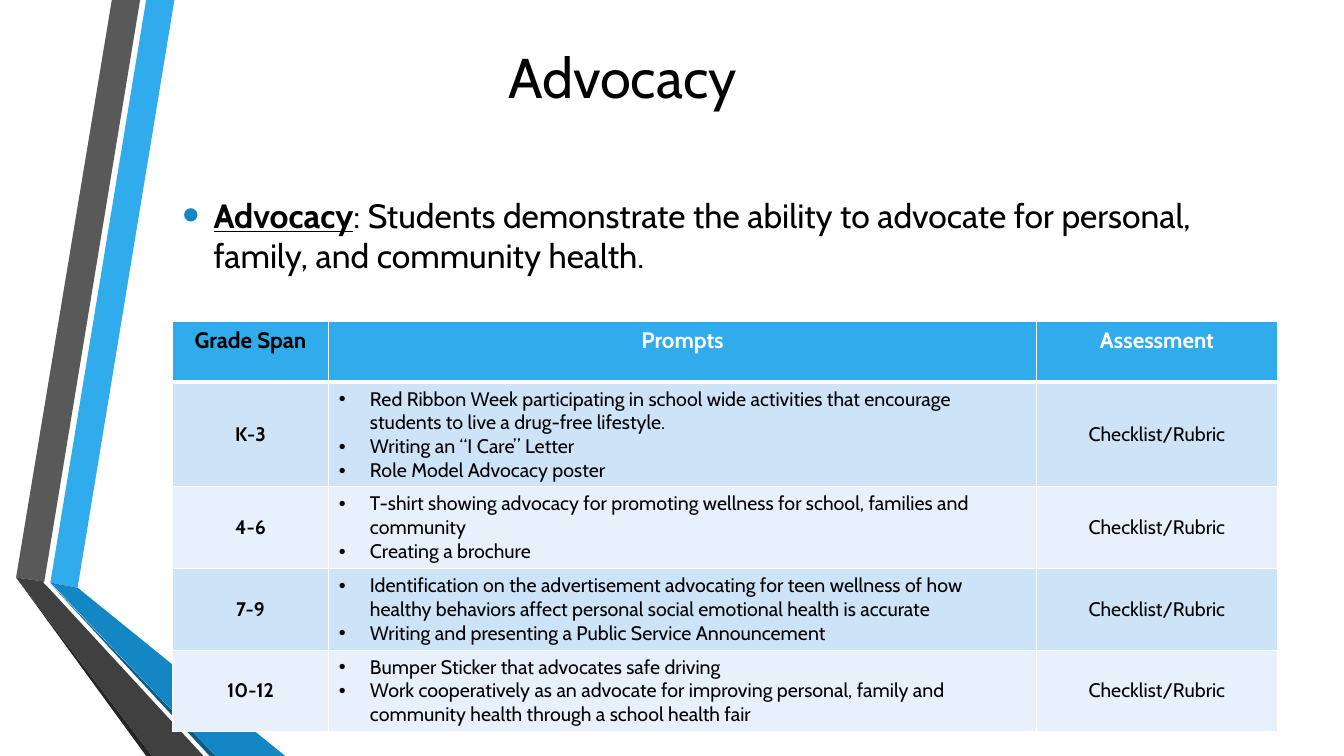
from lxml import etree
from pptx import Presentation, util as u
from pptx.dml.color import RGBColor
from pptx.enum import text
from pptx.oxml.ns import qn

PX = 9144  # EMU per px, 100 px to the inch
BLACK, WHITE, BLUE, DEEP_BLUE = "000000", "FFFFFF", "30ACEC", "1287C3"
BANDS = ("CDE3F8", "E8F1FB")
CENTER = text.PP_ALIGN.CENTER
MIDDLE = text.MSO_ANCHOR.MIDDLE

RIBBONS = [
    (BLUE, [(50, 578), (77, 583), (173, 0), (145, 0)]),
    ("595959", [(139, 0), (111, 0), (16, 573), (44, 577)]),
    ("262626", [(16, 573), (145, 750), (151, 750)]),
    ("0C5A82", [(50, 579), (208, 750), (214, 750)]),
    (DEEP_BLUE, [(50, 578), (214, 750), (283, 750), (77, 583)]),
    ("404040", [(202, 750), (48, 583), (43, 578), (44, 577), (16, 573), (151, 750)]),
]

HEADERS = [("Grade Span", BLACK), ("Prompts", WHITE), ("Assessment", WHITE)]
GRADES = [
    ("K-3", ["Red Ribbon Week participating in school wide activities that encourage "
             "students to live a drug-free lifestyle.",
             "Writing an “I Care” Letter",
             "Role Model Advocacy poster"]),
    ("4-6", ["T-shirt showing advocacy for promoting wellness for school, families and community",
             "Creating a brochure"]),
    ("7-9", ["Identification on the advertisement advocating for teen wellness of how "
             "healthy behaviors affect personal social emotional health is accurate",
             "Writing and presenting a Public Service Announcement"]),
    ("10-12", ["Bumper Sticker that advocates safe driving",
               "Work cooperatively as an advocate for improving personal, family and "
               "community health through a school health fair"]),
]
COLUMNS = [155, 702, 239]
ROWS = [60, 104, 81, 81, 81]


def px(n):
    return u.Emu(n * PX)


def rgb(value):
    return RGBColor.from_string(value)


class Deck:
    font = "Cabin"

    def __init__(self, width, height):
        self.prs = Presentation()
        self.prs.slide_width, self.prs.slide_height = px(width), px(height)
        self.s = self.prs.slides.add_slide(self.prs.slide_layouts[6])

    def style(self, r, size, color=BLACK, bold=False, underline=False):
        f = r.font
        f.name, f.size, f.bold, f.underline = self.font, u.Pt(size), bold, underline
        f.color.rgb = rgb(color)

    def bullet(self, p, color=BLACK, percent=100):
        pPr = p._p.get_or_add_pPr()
        pPr.set("marL", str(px(31)))
        pPr.set("indent", str(-px(31)))
        clr = etree.SubElement(pPr, qn("a:buClr"))
        etree.SubElement(clr, qn("a:srgbClr"), val=color)
        etree.SubElement(pPr, qn("a:buSzPct"), val=str(percent * 1000))
        etree.SubElement(pPr, qn("a:buFont"), typeface="Arial")
        etree.SubElement(pPr, qn("a:buChar"), char="•")

    def polygon(self, color, points):
        builder = self.s.shapes.build_freeform(*points[0], scale=PX)
        builder.add_line_segments(points[1:], close=True)
        sp = builder.convert_to_shape()
        sp.shadow.inherit = False
        sp.fill.solid()
        sp.fill.fore_color.rgb = rgb(color)
        sp.line.fill.background()

    def textbox(self, x, y, w, h):
        """Add a wrapping, vertically centred box and return its first paragraph."""
        tf = self.s.shapes.add_textbox(px(x), px(y), px(w), px(h)).text_frame
        tf.word_wrap = True
        tf.vertical_anchor = MIDDLE
        return tf.paragraphs[0]

    def table(self, x, y, columns, rows):
        shape = self.s.shapes.add_table(len(rows), len(columns), px(x), px(y),
                                        px(sum(columns)), px(sum(rows)))
        for col, w in zip(shape.table.columns, columns):
            col.width = px(w)
        for row, h in zip(shape.table.rows, rows):
            row.height = px(h)
        return shape.table

    def cell(self, cell, lines, fill, size, color=BLACK, bold=False, bullets=False,
             middle=False, top=1, bottom=1):
        """Fill a cell with one paragraph per line; top and bottom are border widths in points."""
        cell.fill.solid()
        cell.fill.fore_color.rgb = rgb(fill)
        if middle:
            cell.vertical_anchor = MIDDLE
        cell.text_frame.text = "\n".join(lines)
        for p in cell.text_frame.paragraphs:
            if bullets:
                self.bullet(p)
            else:
                p.alignment = CENTER
            self.style(p.runs[0], size, color, bold)
        tcPr = cell._tc.get_or_add_tcPr()
        sides = [("L", 1), ("R", 1), ("T", top), ("B", bottom)]
        for i, (side, width) in enumerate(sides):
            ln = etree.Element(qn("a:ln" + side), w=str(u.Pt(width)))
            line_fill = etree.SubElement(ln, qn("a:solidFill"))
            etree.SubElement(line_fill, qn("a:srgbClr"), val=WHITE)
            tcPr.insert(i, ln)


def main():
    deck = Deck(1333, 750)
    for color, points in RIBBONS:
        deck.polygon(color, points)

    title = deck.textbox(171, 24, 893, 102)
    title.text = "Advocacy"
    title.alignment = CENTER
    deck.style(title.runs[0], 40)

    definition = deck.textbox(171, 155, 1096, 156)
    deck.bullet(definition, DEEP_BLUE, 145)
    term, meaning = definition.add_run(), definition.add_run()
    term.text = "Advocacy"
    meaning.text = (": Students demonstrate the ability to advocate for personal, "
                    "family, and community health.")
    deck.style(term, 24, bold=True, underline=True)
    deck.style(meaning, 24)

    table = deck.table(171, 319, COLUMNS, ROWS)
    for c, (label, color) in enumerate(HEADERS):
        deck.cell(table.cell(0, c), [label], BLUE, 16, color, bold=True, bottom=3)
    for r, (grade, prompts) in enumerate(GRADES, 1):
        fill = BANDS[(r - 1) % 2]
        top = 3 if r == 1 else 1
        deck.cell(table.cell(r, 0), [grade], fill, 14, bold=True, middle=True, top=top)
        deck.cell(table.cell(r, 1), prompts, fill, 14, bullets=True, top=top)
        deck.cell(table.cell(r, 2), ["Checklist/Rubric"], fill, 14, middle=True, top=top)

    deck.prs.save("out.pptx")


if __name__ == "__main__":
    main()
